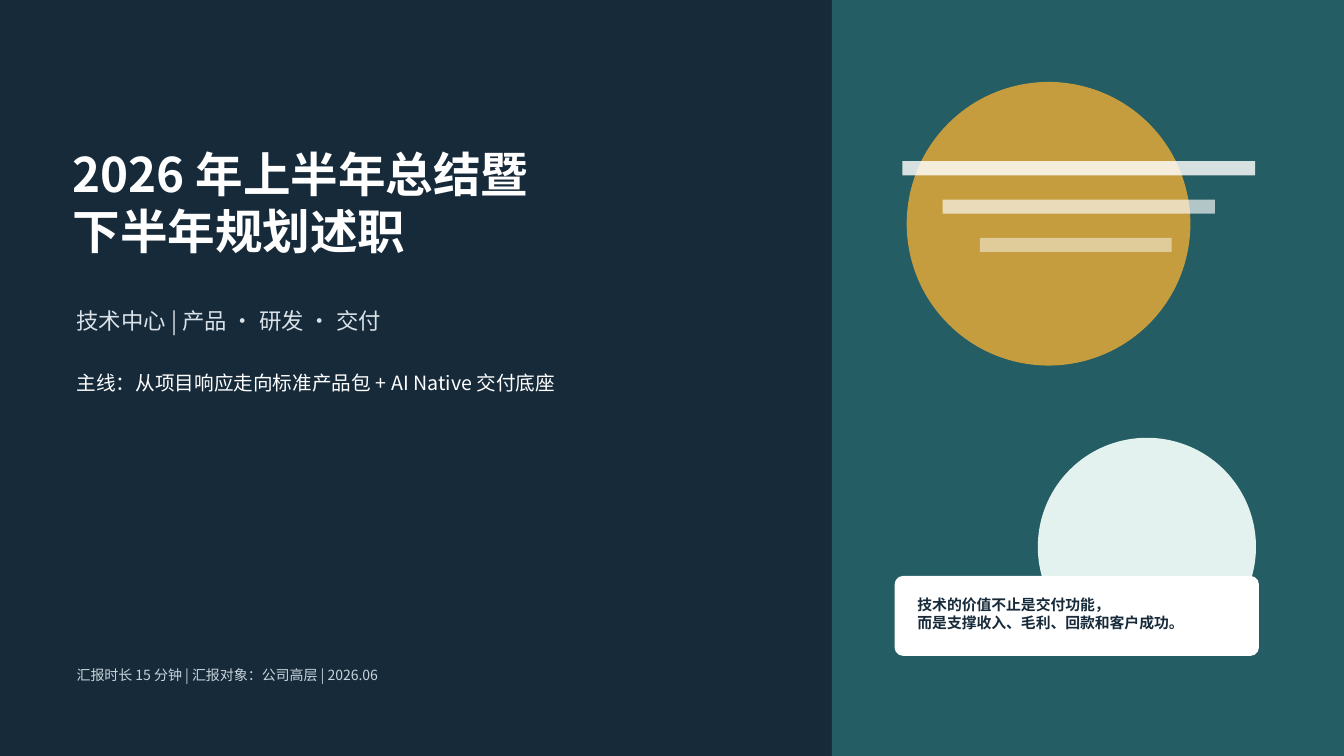
from dataclasses import dataclass

from lxml import etree
from pptx import Presentation
from pptx.dml.color import RGBColor
from pptx.enum.shapes import MSO_SHAPE
from pptx.enum.text import MSO_ANCHOR, MSO_AUTO_SIZE, PP_ALIGN
from pptx.oxml.ns import qn
from pptx.util import Inches, Pt

RECT, OVAL, ROUND = MSO_SHAPE.RECTANGLE, MSO_SHAPE.OVAL, MSO_SHAPE.ROUNDED_RECTANGLE
MIDDLE, LEFT, FIXED = MSO_ANCHOR.MIDDLE, PP_ALIGN.LEFT, MSO_AUTO_SIZE.NONE

NAVY = RGBColor(0x17, 0x2A, 0x3A)
TEAL = RGBColor(0x24, 0x5D, 0x63)
GOLD = RGBColor(0xC5, 0x9D, 0x3F)
MINT = RGBColor(0xE4, 0xF2, 0xEF)
WHITE = RGBColor(0xFF, 0xFF, 0xFF)
MIST = RGBColor(0xD9, 0xE2, 0xE8)
GREY = RGBColor(0xC7, 0xD4, 0xDC)

FACE = "Noto Sans CJK SC"
FRAME = {
    "margin_left": 0, "margin_top": 0, "margin_right": 0, "margin_bottom": 0,
    "vertical_anchor": MIDDLE, "word_wrap": True, "auto_size": FIXED,
}
PARA = {"alignment": LEFT, "space_before": Pt(0), "space_after": Pt(0)}

Box = tuple[float, float, float, float]


@dataclass
class Form:
    kind: int
    box: Box
    color: RGBColor
    edge: bool = False
    alpha: int = 100


@dataclass
class Label:
    text: str
    box: Box
    size: float
    color: RGBColor
    bold: bool = False


PANEL = Form(RECT, (8.25, 0, 5.08, 7.5), TEAL)
SUN = Form(OVAL, (9, 0.82, 2.8, 2.8), GOLD, edge=True)
MOON = Form(OVAL, (10.3, 4.35, 2.15, 2.15), MINT, edge=True)
BARS = [
    Form(RECT, (left, 1.6 + 0.38 * i, width, 0.14), WHITE, alpha=82 - 17 * i)
    for i, (left, width) in enumerate([(8.95, 3.5), (9.35, 2.7), (9.72, 1.9)])
]
CARD = Form(ROUND, (8.88, 5.72, 3.6, 0.78), WHITE, edge=True)

TITLE = Label("2026 年上半年总结暨\n下半年规划述职", (0.72, 1.38, 6.9, 1.25), 34, WHITE, True)
TEAM = Label("技术中心 | 产品 · 研发 · 交付", (0.76, 3, 4.8, 0.36), 16, MIST)
NOTES = [
    Label("主线：从项目响应走向标准产品包 + AI Native 交付底座", (0.76, 3.62, 7.1, 0.36), 14, WHITE),
    Label("汇报时长 15 分钟 | 汇报对象：公司高层 | 2026.06", (0.76, 6.56, 6, 0.28), 10, GREY),
    Label("技术的价值不止是交付功能，\n而是支撑收入、毛利、回款和客户成功。",
          (9.1, 5.89, 3.16, 0.4), 10.6, NAVY, True),
]


def apply(target, values: dict) -> None:
    for name, value in values.items():
        setattr(target, name, value)


def draw(slide, form: Form):
    shape = slide.shapes.add_shape(form.kind, *map(Inches, form.box))
    shape.shadow.inherit = False
    shape.fill.solid()
    shape.fill.fore_color.rgb = form.color
    if form.edge:
        shape.line.color.rgb = form.color
        shape.line.width = Pt(1)
    else:
        shape.line.fill.background()
    if form.alpha < 100:
        tone = shape._element.spPr.find(qn("a:solidFill"))[0]
        etree.SubElement(tone, qn("a:alpha"), val=str(form.alpha * 1000))
    return shape


def write(shape, label: Label) -> None:
    """Place a placeholder or text box and fill it with styled text."""
    names = ("left", "top", "width", "height")
    apply(shape, dict(zip(names, map(Inches, label.box))))
    frame = shape.text_frame
    apply(frame, FRAME)
    frame.text = label.text
    style = {"name": FACE, "size": Pt(label.size), "bold": label.bold}
    for para in frame.paragraphs:
        apply(para, PARA)
        for run in para.runs:
            apply(run.font, style)
            run.font.color.rgb = label.color
            latin = run._r.rPr.find(qn("a:latin"))
            latin.addnext(etree.Element(qn("a:ea"), typeface=FACE))


def main() -> None:
    deck = Presentation()
    deck.slide_width, deck.slide_height = Inches(13.33), Inches(7.5)
    slide = deck.slides.add_slide(deck.slide_layouts[0])
    slide.background.fill.solid()
    slide.background.fill.fore_color.rgb = NAVY

    for form in (PANEL, SUN, MOON, *BARS):
        draw(slide, form)
    draw(slide, CARD).adjustments[0] = 0.1

    write(slide.shapes.title, TITLE)
    write(slide.placeholders[1], TEAM)
    for note in NOTES:
        write(slide.shapes.add_textbox(*map(Inches, note.box)), note)
    deck.save("out.pptx")


if __name__ == "__main__":
    main()
